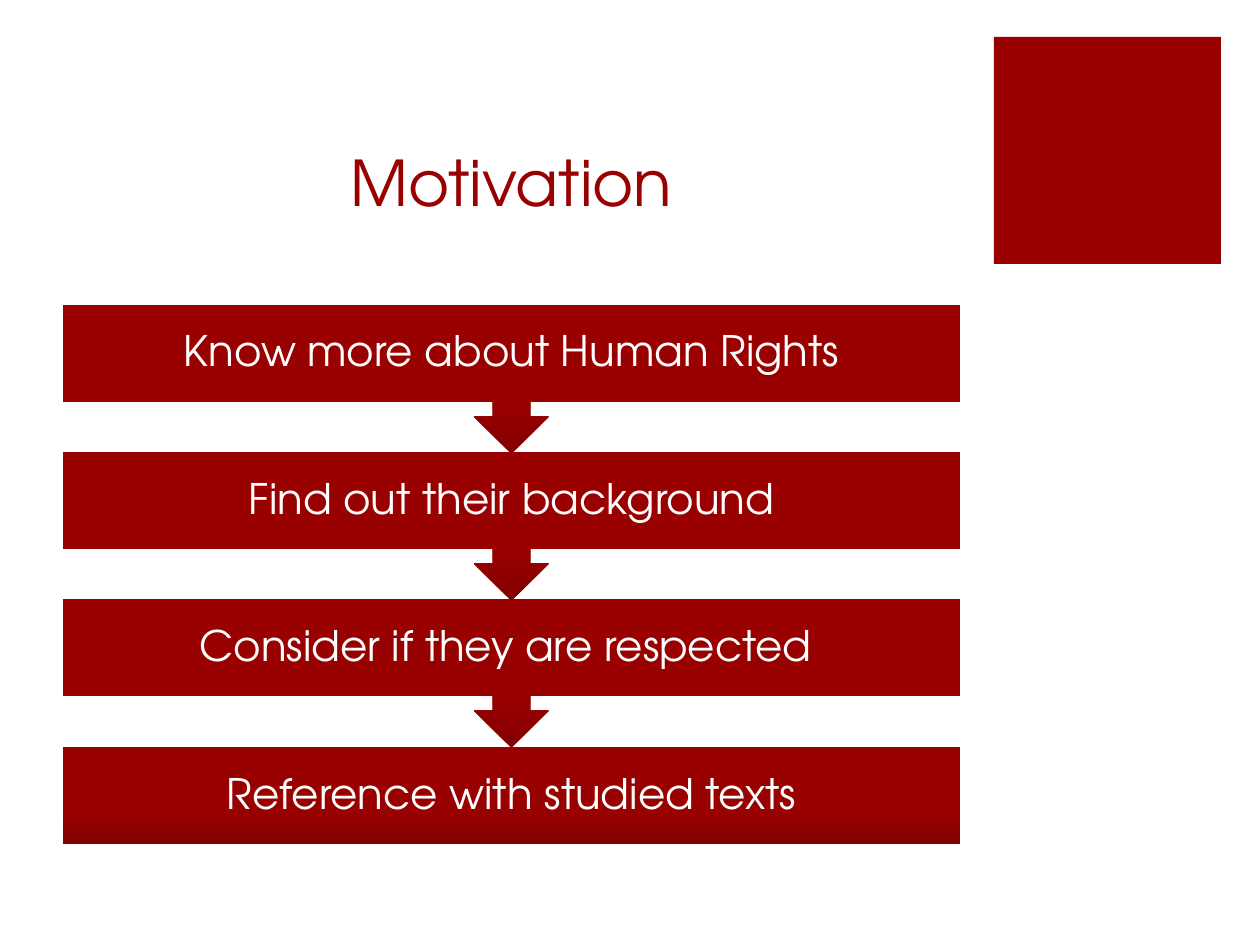
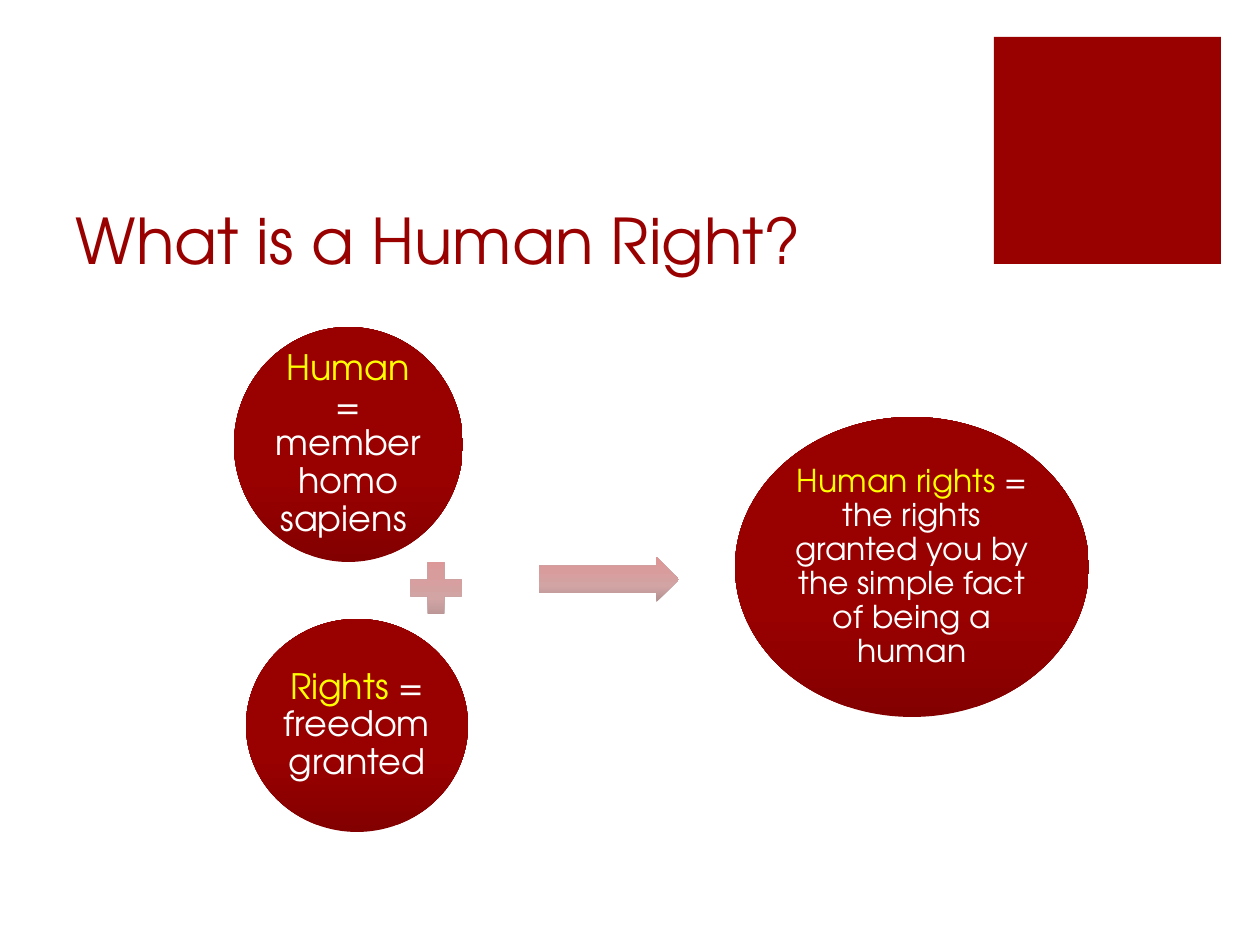
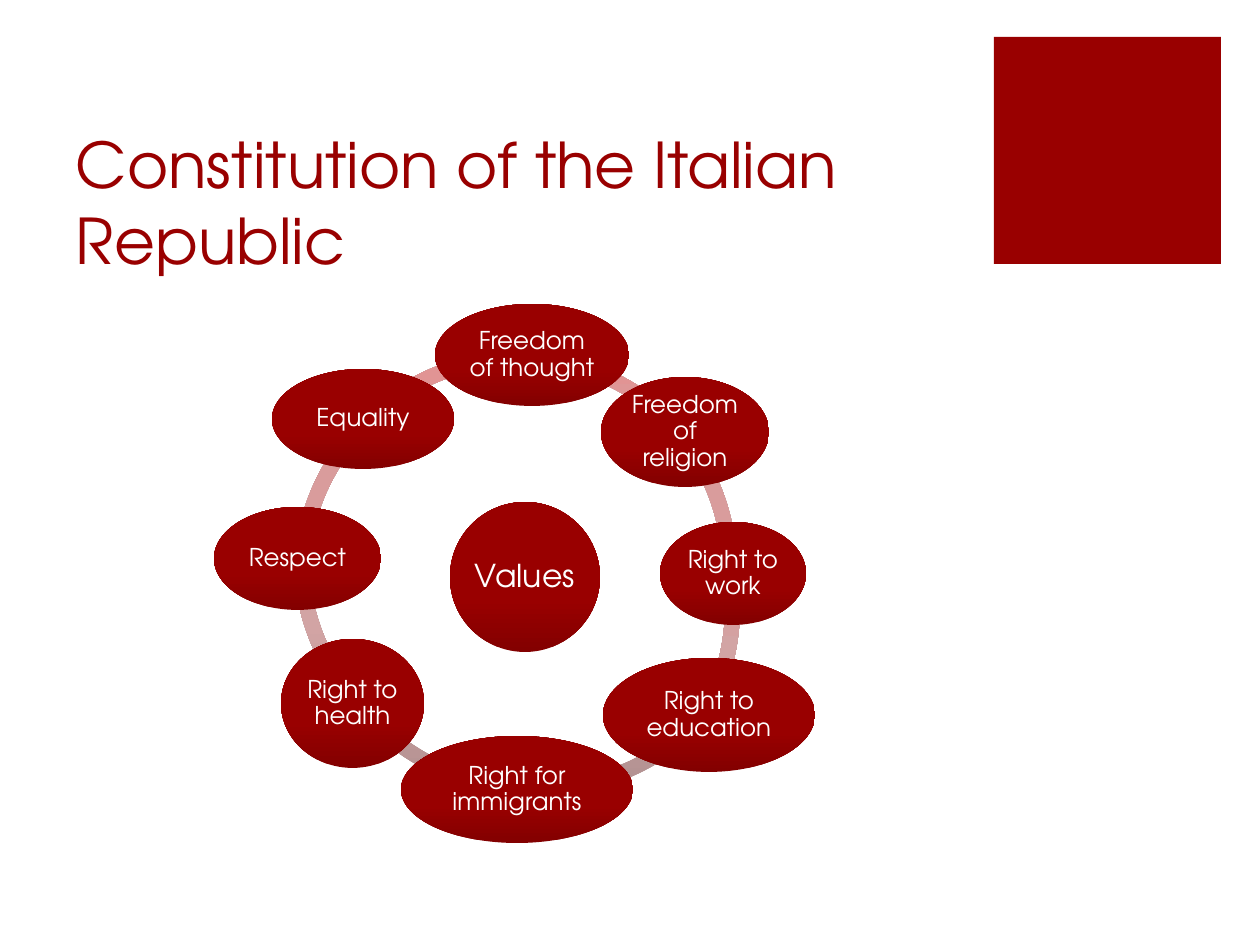
from dataclasses import dataclass

from lxml import etree
from pptx import Presentation
from pptx import util as u
from pptx.dml.color import RGBColor
from pptx.enum import shapes, text
from pptx.oxml import ns

SHAPE = shapes.MSO_SHAPE
PX_PER_INCH = 126


@dataclass(frozen=True)
class Theme:
    font: str = "TeX Gyre Adventor"
    red: str = "990000"
    white: str = "FFFFFF"
    yellow: str = "FFFF00"
    # Gradient stops: position in percent, colour; from bottom to top
    strong: tuple = ((0, "830000"), (35, "990000"), (100, "990000"))
    pale: tuple = ((0, "B09090"), (35, "D2A4A4"), (70, "D99C9C"), (100, "E19494"))
    title_size: int = 36
    step_size: int = 24
    term_size: int = 20
    center_size: int = 18
    value_size: int = 14


T = Theme()


def px(n):
    return u.Inches(n / PX_PER_INCH)


def set_all(obj, values):
    for name, value in values.items():
        setattr(obj, name, value)


# --- Element kinds ---

def write(sp, parts, size, inset, align=text.PP_ALIGN.CENTER,
          anchor=text.MSO_ANCHOR.MIDDLE, spacing=0.9):
    """Write (wording, colour) parts as one paragraph; inset is (x, y)."""
    tf = sp.text_frame
    x, y = (px(n) for n in inset)
    set_all(tf, {"word_wrap": True, "vertical_anchor": anchor,
                 "margin_left": x, "margin_right": x,
                 "margin_top": y, "margin_bottom": y})
    p = tf.paragraphs[0]
    set_all(p, {"alignment": align, "line_spacing": spacing})
    for wording, color in parts:
        r = p.add_run()
        r.text = wording
        set_all(r.font, {"name": T.font, "size": u.Pt(size)})
        r.font.color.rgb = RGBColor.from_string(color)


def add_shape(s, kind, box, adjust=()):
    sp = s.shapes.add_shape(kind, *map(px, box))
    sp.shadow.inherit = False
    sp.line.fill.background()
    for i, value in enumerate(adjust):
        sp.adjustments[i] = value
    return sp


def add_shaded(s, kind, box, stops=T.strong, adjust=()):
    sp = add_shape(s, kind, box, adjust)
    sp.fill.gradient()
    sp.fill.gradient_angle = 90
    gs_list = sp.fill._fill._gradFill.find(ns.qn("a:gsLst"))
    for old in list(gs_list):
        gs_list.remove(old)
    for pos, color in stops:
        gs = etree.SubElement(gs_list, ns.qn("a:gs"), pos=str(pos * 1000))
        etree.SubElement(gs, ns.qn("a:srgbClr"), val=color)
    return sp


def add_oval(s, box, parts, size, inset):
    write(add_shaded(s, SHAPE.OVAL, box), parts, size, (inset, inset))


def add_titled_slide(prs, title, top=126, align=text.PP_ALIGN.LEFT):
    s = prs.slides.add_slide(prs.slide_layouts[6])
    # Corner square
    sp = add_shape(s, SHAPE.RECTANGLE, (994, 37, 227, 227))
    sp.fill.solid()
    sp.fill.fore_color.rgb = RGBColor.from_string(T.red)
    # Title
    sp = s.shapes.add_textbox(*map(px, (63, top, 897, 157)))
    write(sp, [(title, T.red)], T.title_size, (13, 6), align,
          text.MSO_ANCHOR.BOTTOM, 1.0)
    return s


# --- Slides ---

def add_motivation(prs):
    s = add_titled_slide(prs, "Motivation", 68, text.PP_ALIGN.CENTER)
    steps = ["Know more about Human Rights", "Find out their background",
             "Consider if they are respected ", "Reference with studied texts"]
    last = len(steps) - 1
    # Later steps lie behind, so each arrow tip covers the next bar
    for i in range(last, -1, -1):
        kind, height = ((SHAPE.RECTANGLE, 97) if i == last
                        else (SHAPE.DOWN_ARROW_CALLOUT, 149))
        sp = add_shaded(s, kind, (63, 305 + 442 * i // 3, 897, height))
        write(sp, [(steps[i], T.white)], T.step_size, (24, 24))


def add_definition(prs):
    s = add_titled_slide(prs, "What is a Human Right?")
    terms = [
        ((234, 327, 229, 235), "Human ", "= member homo sapiens ", T.term_size),
        ((246, 619, 222, 213), "Rights", " = freedom granted", T.term_size),
        ((735, 417, 354, 300), "Human rights ",
         "= the rights granted you by the simple fact of being a human",
         T.center_size),
    ]
    for box, term, meaning, size in terms:
        add_oval(s, box, [(term, T.yellow), (meaning, T.white)], size, 4)
    # Operators between the terms
    add_shaded(s, SHAPE.MATH_PLUS, (401, 553, 70, 70), T.pale)
    add_shaded(s, SHAPE.RIGHT_ARROW, (539, 557, 140, 45), T.pale, (0.6, 0.5))


def add_values(prs):
    s = add_titled_slide(prs, "Constitution of the Italian Republic")
    # Ring: left, top, start and end in degrees
    arcs = [(297, 351, 225, 274), (294, 355, 185, 226), (294, 338, 138, 180),
            (306, 353, 93, 143), (323, 354, 40, 97), (299, 388, 351, 29),
            (296, 349, 321, 1), (299, 351, 273, 320)]
    for left, top, start, end in arcs:
        add_shaded(s, SHAPE.BLOCK_ARC, (left, top, 441, 441), T.pale,
                   (start * 0.6, end * 0.6, 0.034))
    # Center and the values around it; narrow insets keep words whole
    add_oval(s, (450, 502, 150, 150), [("Values", T.white)], T.center_size, 1)
    values = [
        ("Freedom of thought", (435, 304, 194, 102)),
        ("Freedom of religion", (601, 377, 168, 110)),
        ("Right to work", (660, 522, 146, 103)),
        ("Right to education", (603, 658, 212, 114)),
        ("Right for immigrants", (401, 736, 232, 107)),
        ("Right to health", (281, 639, 143, 129)),
        ("Respect", (214, 507, 167, 103)),
        ("Equality", (272, 369, 182, 100)),
    ]
    for name, box in values:
        add_oval(s, box, [(name, T.white)], T.value_size, 2)


def main():
    prs = Presentation()
    set_all(prs, {"slide_width": px(1260), "slide_height": px(945)})
    add_motivation(prs)
    add_definition(prs)
    add_values(prs)
    prs.save("out.pptx")


if __name__ == "__main__":
    main()
